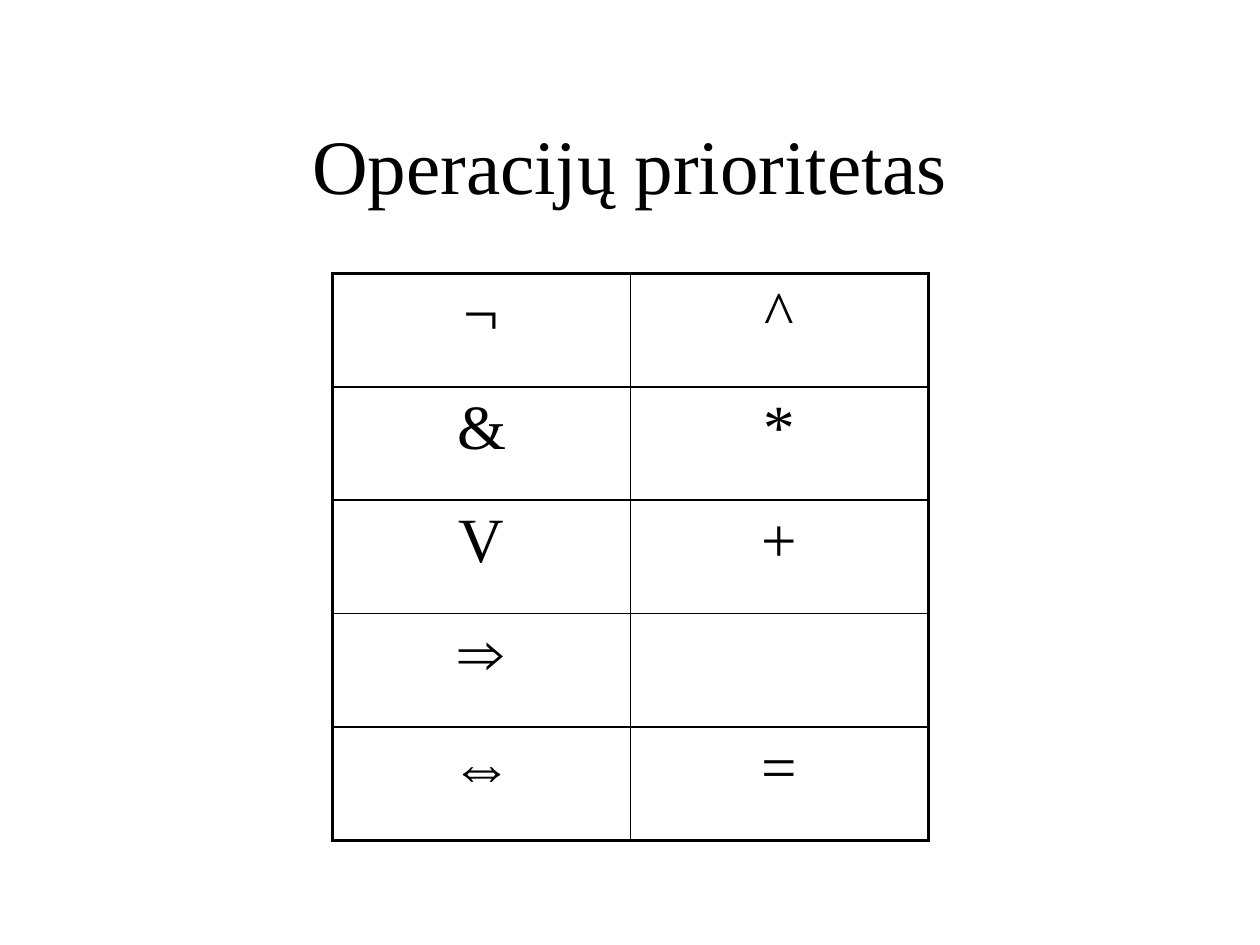
from dataclasses import dataclass

from lxml import etree
from pptx import Presentation, util as u
from pptx.dml.color import RGBColor
from pptx.enum import text as t
from pptx.oxml.ns import qn


@dataclass(frozen=True)
class Theme:
    font: str = "Times New Roman"
    ink: str = "000000"
    title: float = 44
    body: float = 36
    thin: float = 1
    thick: float = 2.25


@dataclass(frozen=True)
class Box:
    """A place on the slide, in inches."""
    left: float
    top: float
    width: float
    height: float

    def emu(self) -> list[int]:
        return [u.Inches(n) for n in (self.left, self.top, self.width, self.height)]


THEME = Theme()
WIDTH, HEIGHT = 10, 7.5
TITLE = Box(0.75, 0.67, 8.5, 1.25)
GRID = Box(2.64, 2.17, 4.73, 4.5)
ROWS = [("¬", "^"), ("&", "*"), ("V", "+"), ("⇒", ""), ("⇔", "=")]


def write(frame, words: str, *, size: float, align=t.PP_ALIGN.CENTER) -> None:
    para = frame.paragraphs[0]
    para.alignment = align
    if not words:
        return
    run = para.add_run()
    run.text = words
    run.font.name = THEME.font
    run.font.size = u.Pt(size)
    run.font.color.rgb = RGBColor.from_string(THEME.ink)


def edge(cell, side: str, width: float) -> None:
    """Draw one border of a cell; call in the order L, R, T, B."""
    props = cell._tc.get_or_add_tcPr()
    line = etree.SubElement(props, qn(f"a:ln{side}"), w=str(u.Pt(width)))
    fill = etree.SubElement(line, qn("a:solidFill"))
    etree.SubElement(fill, qn("a:srgbClr"), val=THEME.ink)


def add_title(slide, words: str) -> None:
    frame = slide.shapes.add_textbox(*TITLE.emu()).text_frame
    frame.word_wrap = True
    frame.vertical_anchor = t.MSO_ANCHOR.MIDDLE
    write(frame, words, size=THEME.title)


def add_grid(slide, rows: list[tuple[str, str]]) -> None:
    high, wide = len(rows), len(rows[0])
    table = slide.shapes.add_table(high, wide, *GRID.emu()).table
    table.first_row = table.horz_banding = False
    for r, row in enumerate(rows):
        for c, sign in enumerate(row):
            cell = table.cell(r, c)
            write(cell.text_frame, sign, size=THEME.body)
            outer = {"L": c == 0, "R": c == wide - 1,
                     "T": r == 0, "B": r == high - 1}
            for side, rim in outer.items():
                edge(cell, side, THEME.thick if rim else THEME.thin)
            cell.fill.background()


def main() -> None:
    deck = Presentation()
    deck.slide_width, deck.slide_height = u.Inches(WIDTH), u.Inches(HEIGHT)
    slide = deck.slides.add_slide(deck.slide_layouts[6])
    add_title(slide, "Operacijų prioritetas")
    add_grid(slide, ROWS)
    deck.save("out.pptx")


if __name__ == "__main__":
    main()
